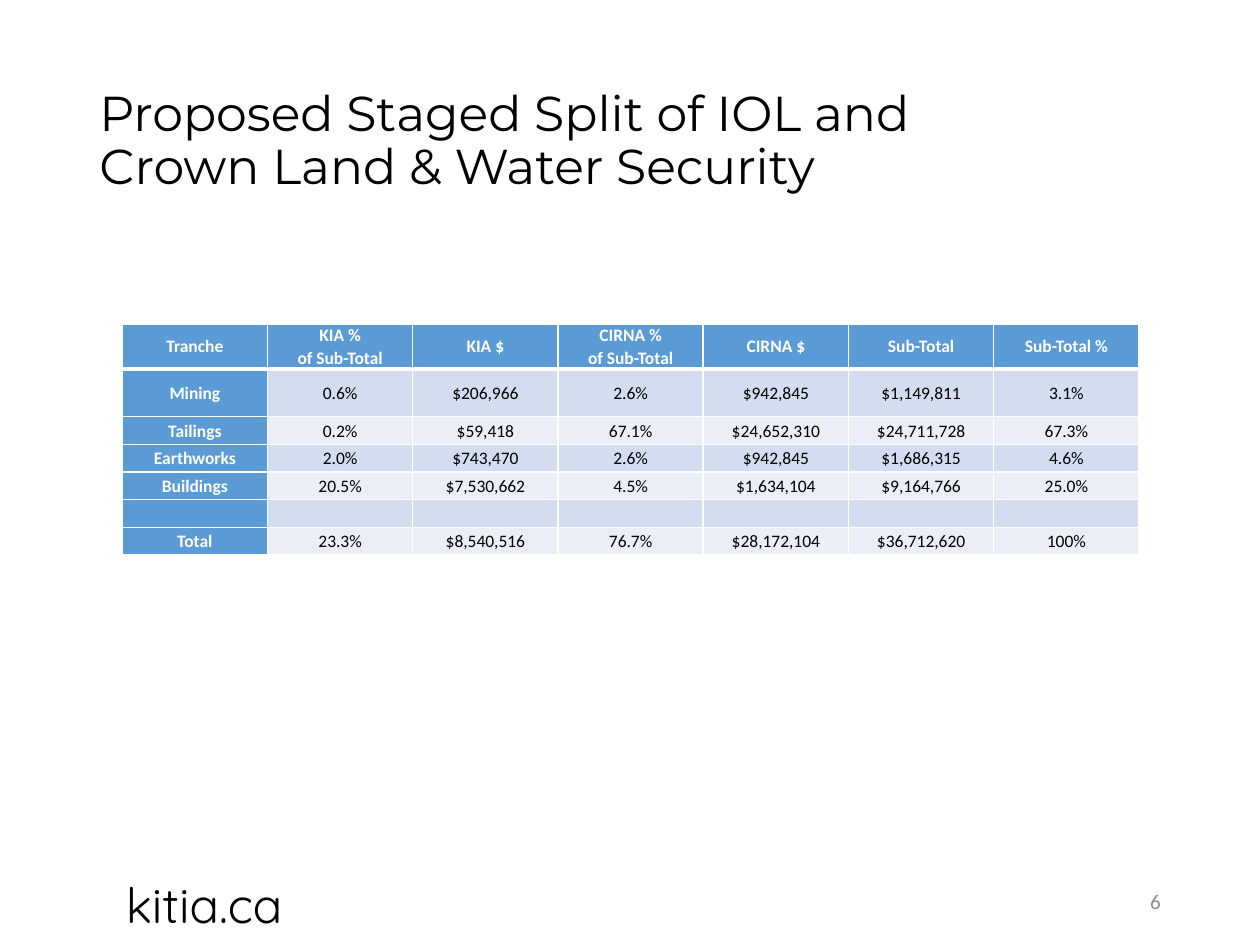
import lxml.etree
import pptx
import pptx.dml.color
import pptx.enum.text
import pptx.oxml.ns
import pptx.util

Inches = pptx.util.Inches
Pt = pptx.util.Pt
ALIGN = pptx.enum.text.PP_ALIGN
ANCHOR = pptx.enum.text.MSO_ANCHOR

HEADER_BLUE = "5B9BD5"
BAND_FILLS = ["EAEFF7", "D2DEEF"]
ROWS = [
    ["Tranche", "KIA %\nof Sub-Total", "KIA $", "CIRNA %\nof Sub-Total", "CIRNA $", "Sub-Total", "Sub-Total %"],
    ["Mining", "0.6%", "$206,966", "2.6%", "$942,845", "$1,149,811", "3.1%"],
    ["Tailings", "0.2%", "$59,418", "67.1%", "$24,652,310", "$24,711,728", "67.3%"],
    ["Earthworks", "2.0%", "$743,470", "2.6%", "$942,845", "$1,686,315", "4.6%"],
    ["Buildings", "20.5%", "$7,530,662", "4.5%", "$1,634,104", "$9,164,766", "25.0%"],
    [""] * 7,
    ["Total", "23.3%", "$8,540,516", "76.7%", "$28,172,104", "$36,712,620", "100%"],
]


def rgb(color):
    return pptx.dml.color.RGBColor.from_string(color)


def write_text(frame, text, size, font, color="000000", bold=False, align=ALIGN.LEFT, spacing=1.0):
    """Fill a text frame with one paragraph per line of text."""
    frame.word_wrap = True
    for index, line in enumerate(text.split("\n")):
        para = frame.add_paragraph() if index else frame.paragraphs[0]
        para.alignment = align
        para.line_spacing = spacing
        if not line:
            para._p.get_or_add_endParaRPr().set("sz", str(size * 100))
            continue
        span = para.add_run()
        span.text = line
        span.font.size = Pt(size)
        span.font.name = font
        span.font.bold = bold
        span.font.color.rgb = rgb(color)


deck = pptx.Presentation()
deck.slide_width = Inches(10)
deck.slide_height = Inches(7.5)
page = deck.slides.add_slide(deck.slide_layouts[6])

# Website, title and page number
site_box = page.shapes.add_textbox(Inches(0.9), Inches(6.89), Inches(2.42), Inches(0.57))
write_text(site_box.text_frame, "kitia.ca", size=28, font="Quicksand")

title_box = page.shapes.add_textbox(Inches(0.69), Inches(0.4), Inches(7.22), Inches(1.45))
title_box.text_frame.vertical_anchor = ANCHOR.MIDDLE
write_text(title_box.text_frame, "Proposed Staged Split of IOL and Crown Land & Water Security",
           size=28, font="Montserrat", spacing=0.9)

number_box = page.shapes.add_textbox(Inches(7.06), Inches(6.95), Inches(2.25), Inches(0.4))
number_box.text_frame.vertical_anchor = ANCHOR.MIDDLE
write_text(number_box.text_frame, "6", size=12, font="Calibri", color="8C8C8C", align=ALIGN.RIGHT)

# Security table
table = page.shapes.add_table(len(ROWS), len(ROWS[0]), Inches(0.97), Inches(2.57),
                              Inches(8.07), Inches(1.83)).table
for column in table.columns:
    column.width = Inches(8.07 / len(ROWS[0]))
for row in table.rows:
    row.height = Inches(0.22)
table.rows[1].height = Inches(0.38)

for row_index, values in enumerate(ROWS):
    for column_index, value in enumerate(values):
        cell = table.cell(row_index, column_index)
        is_header = row_index == 0 or column_index == 0
        cell.fill.solid()
        cell.fill.fore_color.rgb = rgb(HEADER_BLUE if is_header else BAND_FILLS[row_index % 2])
        cell.vertical_anchor = ANCHOR.MIDDLE
        cell.margin_left = cell.margin_right = Inches(0.07)
        cell.margin_top = cell.margin_bottom = 0
        write_text(cell.text_frame, value, size=10, font="Calibri", bold=is_header,
                   color="FFFFFF" if is_header else "000000", align=ALIGN.CENTER, spacing=1.07)

        # White borders, thicker between the header and the first row
        widths = {"L": 1, "R": 1, "T": 3 if row_index == 1 else 1, "B": 3 if row_index == 0 else 1}
        properties = cell._tc.get_or_add_tcPr()
        for position, (side, width) in enumerate(widths.items()):
            border = lxml.etree.Element(pptx.oxml.ns.qn(f"a:ln{side}"), w=str(Pt(width)))
            fill = lxml.etree.SubElement(border, pptx.oxml.ns.qn("a:solidFill"))
            lxml.etree.SubElement(fill, pptx.oxml.ns.qn("a:srgbClr"), val="FFFFFF")
            properties.insert(position, border)

deck.save("out.pptx")
